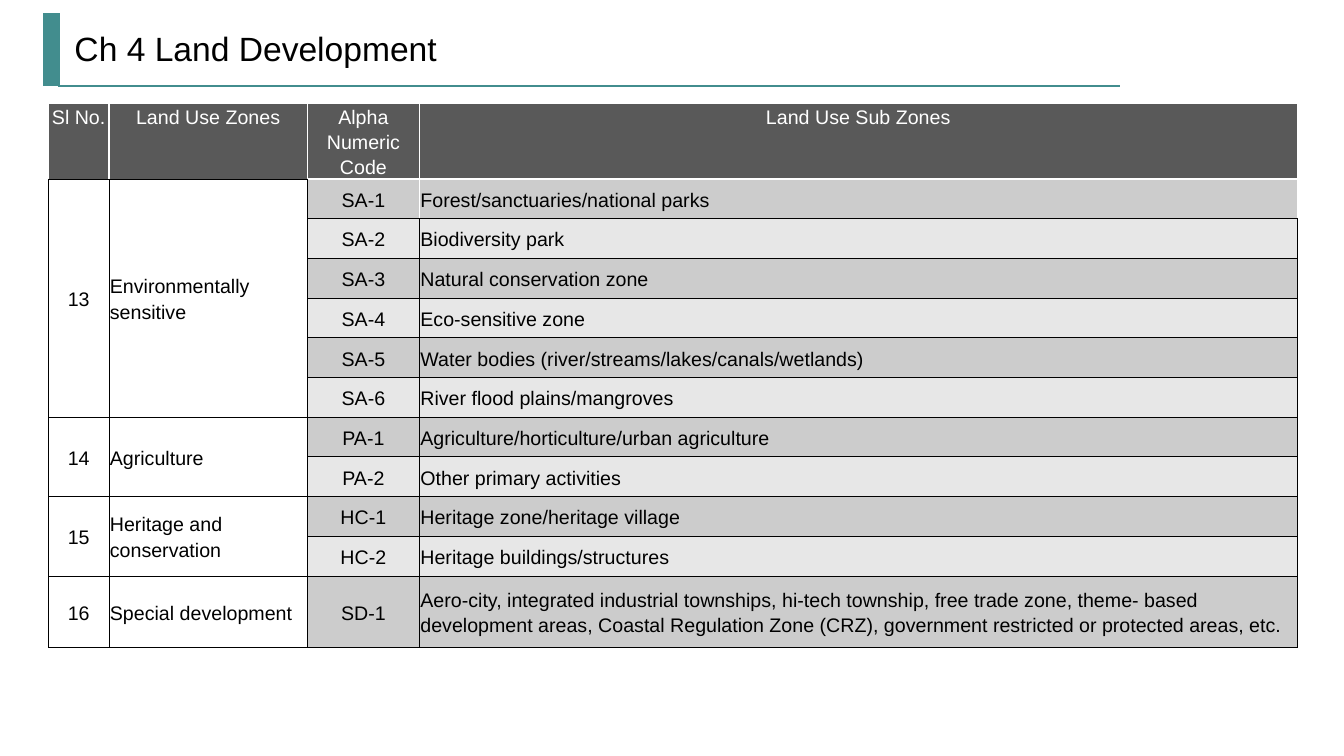
import pptx
import pptx.util
import pptx.dml.color
import pptx.enum.shapes
import pptx.enum.text
import pptx.oxml
import pptx.oxml.ns

Pt = pptx.util.Pt
RGB = pptx.dml.color.RGBColor
ALIGN = pptx.enum.text.PP_ALIGN
ANCHOR = pptx.enum.text.MSO_ANCHOR

TEAL = RGB(0x42, 0x8D, 0x8E)
BLACK = RGB(0, 0, 0)
WHITE = RGB(0xFF, 0xFF, 0xFF)
SLATE = RGB(0x59, 0x59, 0x59)
GRAY = RGB(0xCC, 0xCC, 0xCC)
PALE = RGB(0xE7, 0xE7, 0xE7)

WIDTHS = [43.2, 141.8, 80, 627]
HEAD = ["Sl No.", "Land Use Zones", "Alpha Numeric Code", "Land Use Sub Zones"]
ZONES = [
    ("13", "Environmentally sensitive", "SA", [
        "Forest/sanctuaries/national parks",
        "Biodiversity park",
        "Natural conservation zone",
        "Eco-sensitive zone",
        "Water bodies (river/streams/lakes/canals/wetlands)",
        "River flood plains/mangroves",
    ]),
    ("14", "Agriculture", "PA", [
        "Agriculture/horticulture/urban agriculture",
        "Other primary activities",
    ]),
    ("15", "Heritage and conservation", "HC", [
        "Heritage zone/heritage village",
        "Heritage buildings/structures",
    ]),
    ("16", "Special development", "SD", [
        "Aero-city, integrated industrial townships, hi-tech township, "
        "free trade zone, theme- based development areas, Coastal Regulation "
        "Zone (CRZ), government restricted or protected areas, etc.",
    ]),
]


def apply(item, style):
    for key, value in style.items():
        setattr(item, key, value)


class Page:
    face = "Arial"
    thin = (BLACK, 0.5)
    light = (WHITE, 1)

    def __init__(self, deck):
        self.slide = deck.slides.add_slide(deck.slide_layouts[5])

    def text(self, para, words, size, color, **style):
        run = para.add_run()
        run.text = words
        apply(run.font, {"name": self.face, "size": Pt(size), "bold": False})
        run.font.color.rgb = color
        apply(para, style)

    def title(self, words, left, top, width, height):
        shape = self.slide.shapes.title
        apply(shape, {"left": Pt(left), "top": Pt(top),
                      "width": Pt(width), "height": Pt(height)})
        frame = shape.text_frame
        apply(frame, {"word_wrap": True, "vertical_anchor": ANCHOR.MIDDLE,
                      "auto_size": pptx.enum.text.MSO_AUTO_SIZE.NONE})
        self.text(frame.paragraphs[0], words, 24, BLACK,
                  alignment=ALIGN.LEFT, line_spacing=0.9)

    def line(self, start, end, width):
        kind = pptx.enum.shapes.MSO_CONNECTOR.STRAIGHT
        rule = self.slide.shapes.add_connector(
            kind, *[Pt(value) for value in start + end])
        rule.line.color.rgb = TEAL
        rule.line.width = Pt(width)
        effect = pptx.oxml.parse_xml(
            "<a:effectLst %s/>" % pptx.oxml.ns.nsdecls("a"))
        rule._element.spPr.append(effect)

    def border(self, cell, edges):
        props = cell._tc.get_or_add_tcPr()
        for index, side in enumerate("LRTB"):
            color, width = edges.get(side, self.thin)
            props.insert(index, pptx.oxml.parse_xml(
                '<a:ln%s %s w="%d"><a:solidFill><a:srgbClr val="%s"/>'
                '</a:solidFill></a:ln%s>' % (
                    side, pptx.oxml.ns.nsdecls("a"), Pt(width), color, side)))

    def cell(self, cell, words, fill, edges, color=BLACK,
             align=ALIGN.LEFT, anchor=ANCHOR.MIDDLE, after=6):
        apply(cell, {"margin_left": Pt(0.7), "margin_right": Pt(0.7),
                     "margin_top": 0, "margin_bottom": 0,
                     "vertical_anchor": anchor})
        if fill is None:
            cell.fill.background()
        else:
            cell.fill.solid()
            cell.fill.fore_color.rgb = fill
        self.border(cell, edges)
        if words:
            self.text(cell.text_frame.paragraphs[0], words, 14, color,
                      alignment=align, line_spacing=1.15,
                      space_before=Pt(3), space_after=Pt(after))

    def table(self, left, top, widths, heights):
        grid = self.slide.shapes.add_table(
            len(heights), len(widths), Pt(left), Pt(top),
            Pt(sum(widths)), Pt(sum(heights))).table
        apply(grid, {"first_row": False, "horz_banding": False})
        for column, width in zip(grid.columns, widths):
            column.width = Pt(width)
        for row, height in zip(grid.rows, heights):
            row.height = Pt(height)
        return grid

    def zones(self, left, top):
        grid = self.table(left, top, WIDTHS, [54.3] + [28.35] * 10 + [51])
        light = self.light
        for col, words in enumerate(HEAD):
            edges = dict.fromkeys("LRT", light)
            if col > 1:
                edges["B"] = light
            self.cell(grid.cell(0, col), words, SLATE, edges, WHITE,
                      ALIGN.CENTER, ANCHOR.TOP)
        row = 1
        for number, zone, code, parts in ZONES:
            first = row
            for index, part in enumerate(parts, 1):
                fill = GRAY if row % 2 else PALE
                near, far = {}, {}
                if row == 1:
                    near = {"T": light, "R": light}
                    far = {"L": light, "T": light, "R": light}
                lead = index == 1
                self.cell(grid.cell(row, 0), number if lead else "", None, {},
                          align=ALIGN.CENTER, after=3)
                self.cell(grid.cell(row, 1), zone if lead else "", None, {})
                self.cell(grid.cell(row, 2), f"{code}-{index}", fill, near,
                          align=ALIGN.CENTER)
                self.cell(grid.cell(row, 3), part, fill, far)
                row += 1
            if len(parts) > 1:
                for col in (0, 1):
                    grid.cell(first, col).merge(grid.cell(row - 1, col))


def main():
    deck = pptx.Presentation()
    apply(deck, {"slide_width": Pt(960), "slide_height": Pt(540)})
    page = Page(deck)
    page.line((41.8, 61.2), (800, 61.2), 1.5)
    page.line((36.7, 61.2), (36.7, 9.4), 12)
    page.title("Ch 4 Land Development", 46, 15, 802, 42.5)
    page.zones(34.6, 73.6)
    deck.save("out.pptx")


if __name__ == "__main__":
    main()
